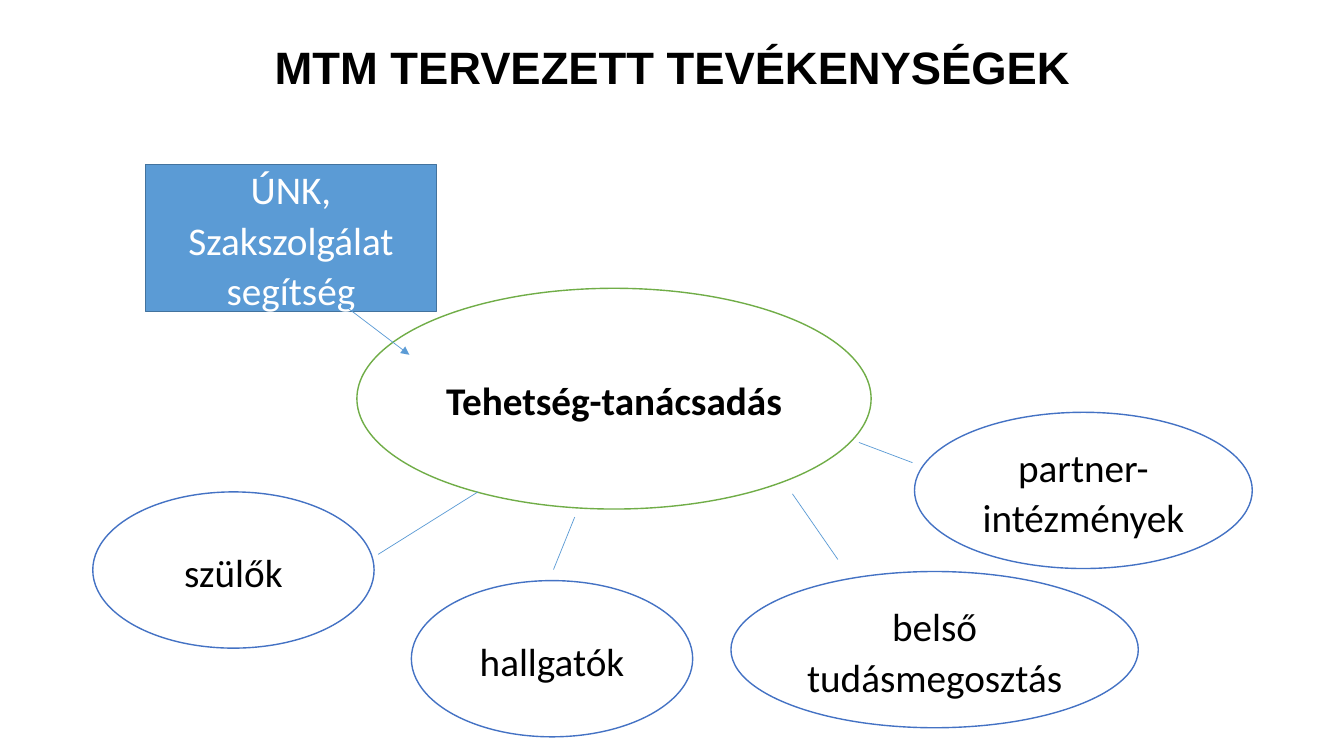
import pptx
import pptx.util
import pptx.dml.color
import pptx.enum.shapes
import pptx.enum.text
import pptx.oxml
from pptx.oxml.ns import qn

Inches = pptx.util.Inches
Pt = pptx.util.Pt
RGBColor = pptx.dml.color.RGBColor
SHAPE = pptx.enum.shapes.MSO_SHAPE

BLACK = RGBColor(0x00, 0x00, 0x00)
WHITE = RGBColor(0xFF, 0xFF, 0xFF)
GREEN = RGBColor(0x70, 0xAD, 0x47)
BLUE = RGBColor(0x44, 0x72, 0xC4)
SKY = RGBColor(0x5B, 0x9B, 0xD5)
STEEL = RGBColor(0x43, 0x73, 0x9E)

AUDIENCES = [
    ("partner-intézmények", (9.07, 4.09, 3.35, 1.55)),
    ("belső tudásmegosztás", (7.25, 5.67, 4.04, 1.55)),
    ("szülők", (0.92, 4.88, 2.79, 1.55)),
    ("hallgatók", (4.08, 5.76, 2.79, 1.55)),
]
SPOKES = [
    (4.74, 4.88, 3.75, 5.5),
    (5.7, 5.13, 5.49, 5.65),
    (8.52, 4.39, 9.05, 4.59),
    (7.86, 4.9, 8.31, 5.55),
]


def write(s, text, font, size, color, bold=False, spacing=1.07, after=0):
    """Put one centred paragraph into a shape."""
    tf = s.text_frame
    tf.word_wrap = True
    tf.vertical_anchor = pptx.enum.text.MSO_ANCHOR.MIDDLE
    p = tf.paragraphs[0]
    p.text = text
    p.alignment = pptx.enum.text.PP_ALIGN.CENTER
    p.line_spacing = spacing
    p.space_after = Pt(after)
    p.font.name = font
    p.font.size = Pt(size)
    p.font.bold = bold
    p.font.color.rgb = color


def add_title(slide, text, box):
    """Add the slide heading."""
    s = slide.shapes.add_textbox(*map(Inches, box))
    write(s, text, "Arial", 32.4, BLACK, bold=True, spacing=0.9)


def add_node(slide, kind, text, box, fill, line, color=BLACK, bold=False, after=8):
    """Add a filled and outlined shape with a label."""
    s = slide.shapes.add_shape(kind, *map(Inches, box))
    s.shadow.inherit = False
    s.fill.solid()
    s.fill.fore_color.rgb = fill
    s.line.color.rgb = line
    s.line.width = Pt(1)
    write(s, text, "Calibri", 28, color, bold, after=after)


def add_line(slide, ends, arrow=False):
    """Add a thin straight line, with an arrowhead at its end if asked."""
    straight = pptx.enum.shapes.MSO_CONNECTOR.STRAIGHT
    s = slide.shapes.add_connector(straight, *map(Inches, ends))
    s.line.color.rgb = SKY
    s.line.width = Pt(0.5)
    if arrow:
        tail = pptx.oxml.xmlchemy.OxmlElement("a:tailEnd")
        tail.set("type", "triangle")
        s.line._get_or_add_ln().append(tail)
    sp_pr = s._element.find(qn("p:spPr"))
    sp_pr.append(pptx.oxml.xmlchemy.OxmlElement("a:effectLst"))


def main():
    """Build the slide and save it."""
    prs = pptx.Presentation()
    prs.slide_width = Inches(13.33)
    prs.slide_height = Inches(7.5)
    slide = prs.slides.add_slide(prs.slide_layouts[6])
    add_title(slide, "MTM TERVEZETT TEVÉKENYSÉGEK", (0.92, 0.4, 11.5, 0.58))
    add_node(slide, SHAPE.OVAL, "Tehetség-tanácsadás", (3.54, 2.86, 5.1, 2.19),
             WHITE, GREEN, bold=True)
    for text, box in AUDIENCES:
        add_node(slide, SHAPE.OVAL, text, box, WHITE, BLUE)
    for ends in SPOKES:
        add_line(slide, ends)
    add_node(slide, SHAPE.RECTANGLE, "ÚNK, Szakszolgálat segítség",
             (1.44, 1.63, 2.89, 1.46), SKY, STEEL, WHITE, after=0)
    add_line(slide, (3.31, 2.95, 4.06, 3.52), arrow=True)
    prs.save("out.pptx")


if __name__ == "__main__":
    main()
